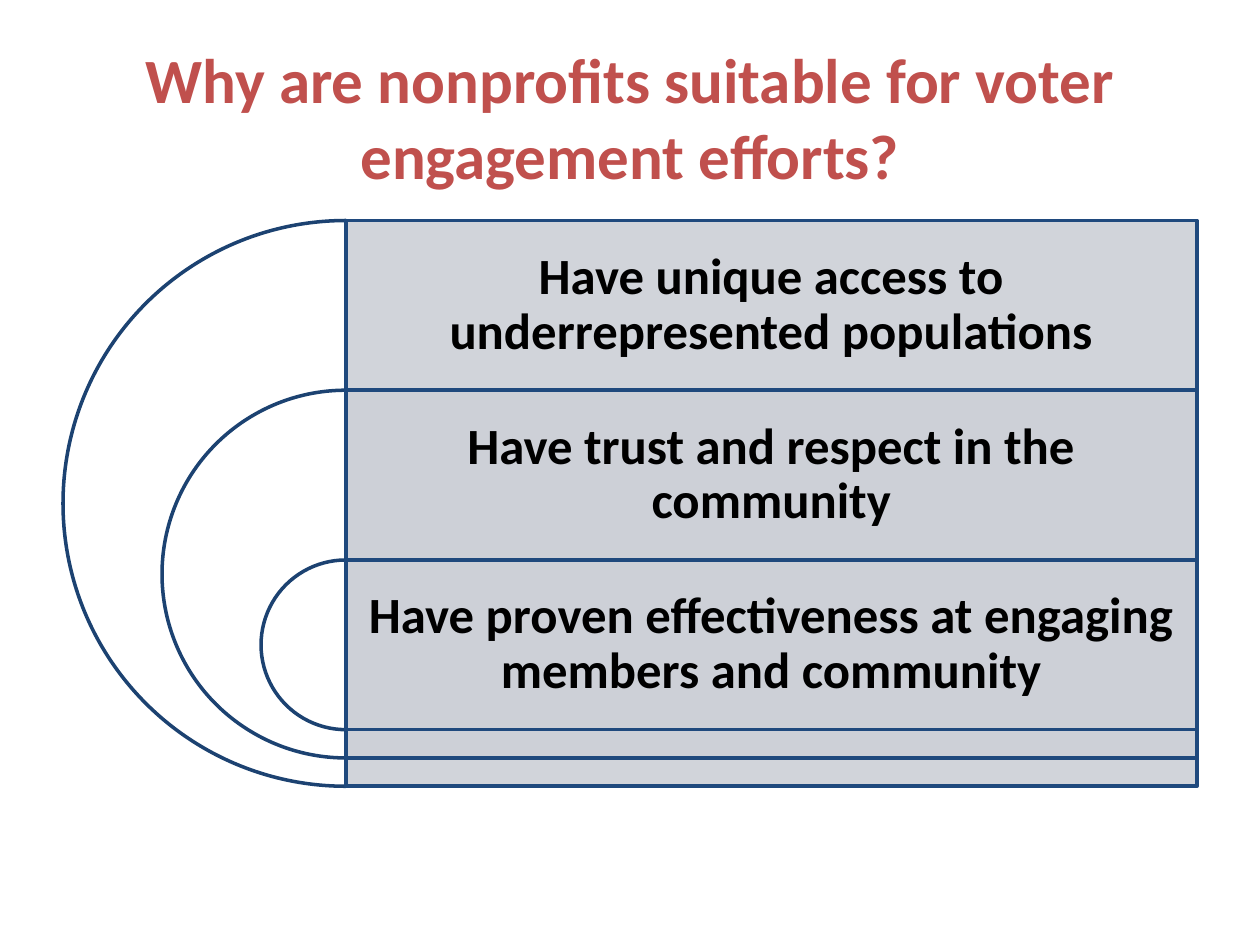
from lxml import etree
from pptx import Presentation
from pptx import util as u
from pptx.dml.color import RGBColor
from pptx.enum import shapes, text
from pptx.oxml.ns import qn

POINTS = [
    "Have unique access to underrepresented populations",
    "Have trust and respect in the community",
    "Have proven effectiveness at engaging members and community",
]


def color(hex_string):
    return RGBColor.from_string(hex_string)


def write(frame, content, size, hex_color, spacing=None, margin=None):
    """Fill a text frame with one bold, centred paragraph."""
    frame.word_wrap = True
    frame.auto_size = text.MSO_AUTO_SIZE.NONE
    frame.vertical_anchor = text.MSO_ANCHOR.MIDDLE
    if margin is not None:
        frame.margin_left = frame.margin_right = u.Inches(margin)
        frame.margin_top = frame.margin_bottom = u.Inches(margin)
    paragraph = frame.paragraphs[0]
    paragraph.text = content
    paragraph.alignment = text.PP_ALIGN.CENTER
    paragraph.line_spacing = spacing
    font = paragraph.font
    font.name, font.size, font.bold = "Calibri", u.Pt(size), True
    font.color.rgb = color(hex_color)


class SlideBuilder:
    """Holds the style, the current slide and the diagram's group."""
    accent, ink = "C0504D", "000000"
    arc_line, panel_line = "1C4271", "1F497D"
    arc_fill, panel_fill = "FFFFFF", "CDD0D7"

    def __init__(self, presentation):
        self.slide = presentation.slides.add_slide(presentation.slide_layouts[5])
        self.group = self.slide.shapes.add_group_shape()

    def title(self, content, *box):
        title = self.slide.shapes.title
        title.left, title.top, title.width, title.height = map(u.Inches, box)
        write(title.text_frame, content, 36, self.accent)

    def outlined(self, kind, box, fill, line):
        shape = self.group.shapes.add_shape(kind, *map(u.Inches, box))
        shape.shadow.inherit = False
        shape.fill.solid()
        shape.fill.fore_color.rgb = color(fill)
        shape.line.color.rgb = color(line)
        shape.line.width = u.Pt(2)
        return shape

    def half_circle(self, center_x, top, size):
        box = (center_x - size / 2, top, size, size)
        pie = self.outlined(shapes.MSO_SHAPE.PIE, box, self.arc_fill, self.arc_line)
        pie.adjustments[0], pie.adjustments[1] = 54, 162  # 90 to 270 degrees

    def panel(self, *box):
        panel = self.outlined(shapes.MSO_SHAPE.RECTANGLE, box,
                              self.panel_fill, self.panel_line)
        fill = panel.fill.fore_color._xFill.find(qn("a:srgbClr"))
        etree.SubElement(fill, qn("a:alpha"), val="90000")

    def label(self, content, *box):
        label = self.group.shapes.add_textbox(*map(u.Inches, box))
        write(label.text_frame, content, 29, self.ink, spacing=0.9, margin=0.12)


def main():
    presentation = Presentation()
    presentation.slide_width, presentation.slide_height = u.Inches(10), u.Inches(7.5)
    builder = SlideBuilder(presentation)

    # Title
    builder.title("Why are nonprofits suitable for voter engagement efforts?",
                  0.5, 0.3, 9, 1.25)

    # Nested targets: each is 35% of the full size smaller, one band lower
    left, top, right, full = 0.5, 1.75, 9.5, 4.49
    center_x = left + full / 2
    width = right - center_x
    band = 0.3 * full
    for row, point in enumerate(POINTS):
        size = full * (1 - 0.35 * row)
        y = top + row * band
        builder.half_circle(center_x, y, size)
        builder.panel(center_x, y, width, size)
        builder.label(point, center_x, y, width, band)

    presentation.save("out.pptx")


if __name__ == "__main__":
    main()
